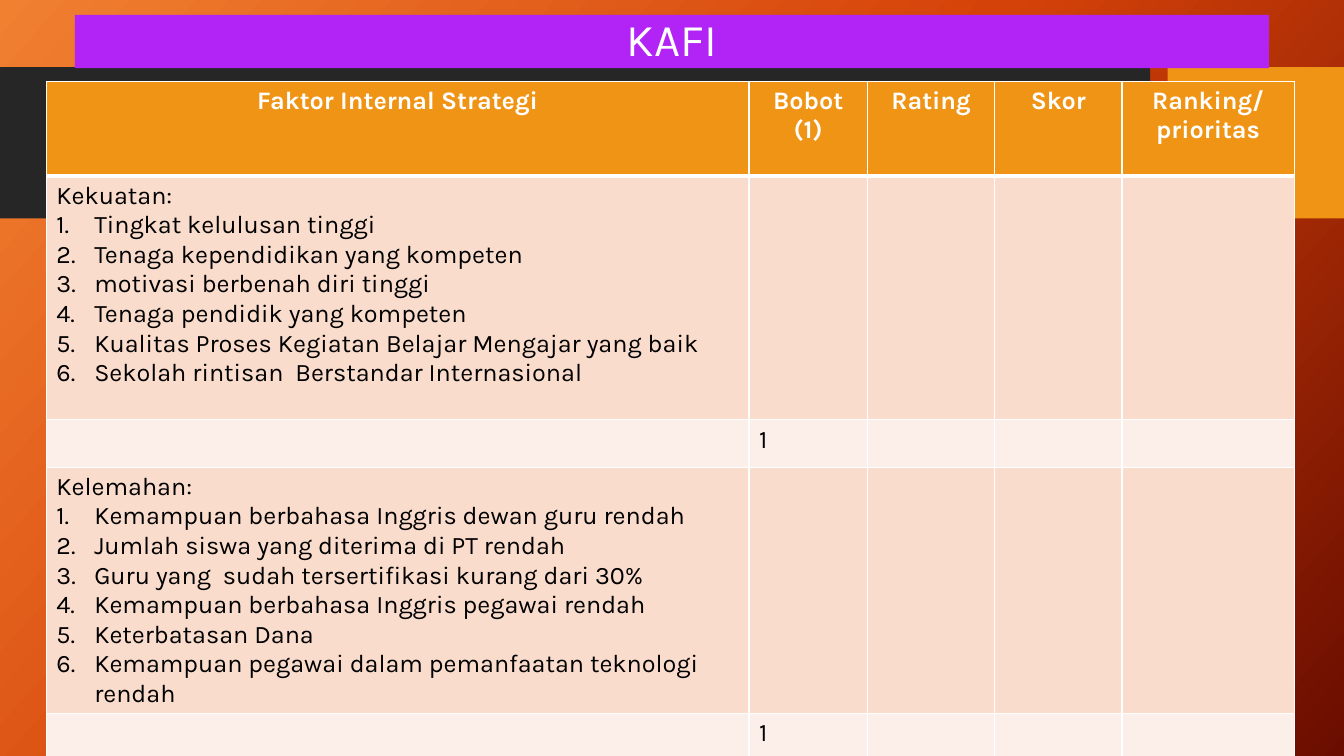
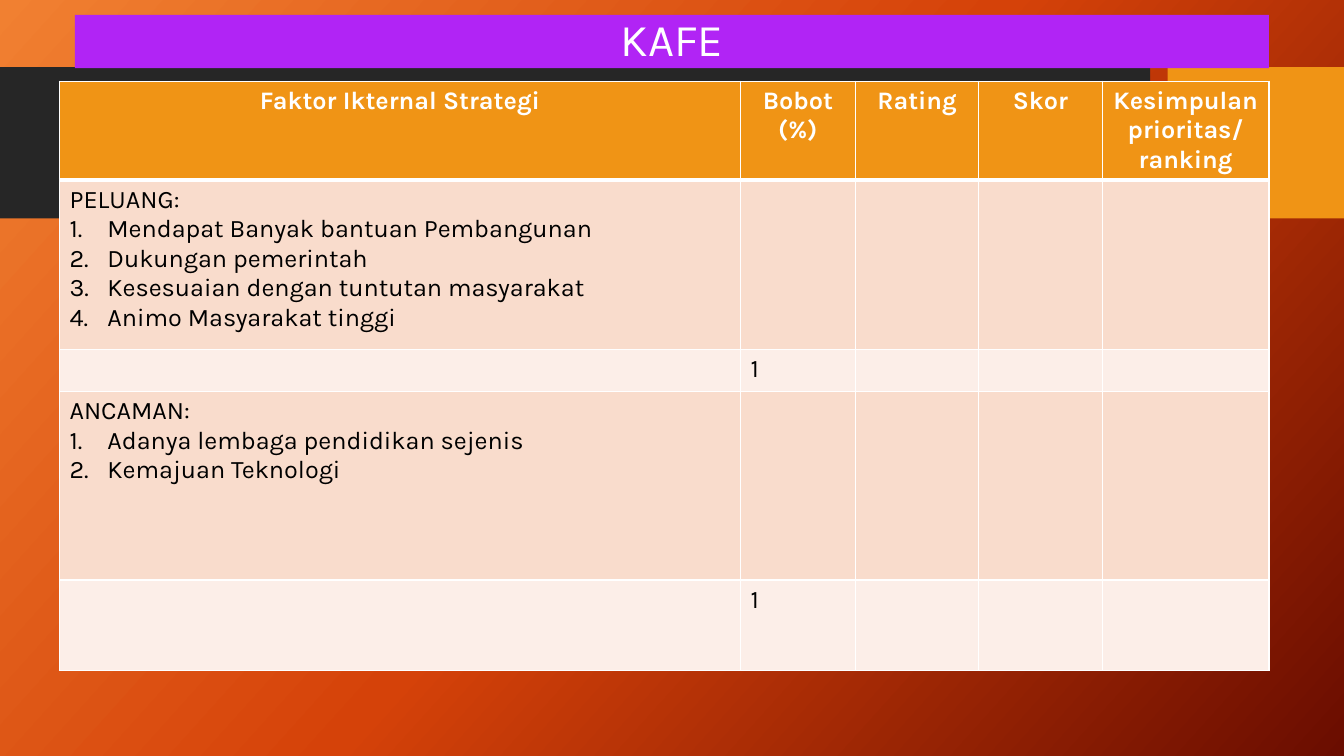
from copy import deepcopy
from dataclasses import dataclass

from lxml import etree
from pptx import Presentation
from pptx.dml.color import RGBColor
from pptx.enum import shapes, text
from pptx.oxml import ns
from pptx.util import Pt


@dataclass(frozen=True)
class Theme:
    font: str = "Karla"
    title_size: float = 32.4
    body_size: float = 18
    white: str = "FFFFFF"
    black: str = "000000"
    dark: str = "262626"
    orange: str = "F09415"
    purple: str = "B124F5"
    entry: str = "F9DCCC"
    total: str = "FCEEE8"
    gradient: tuple = ((0, "F18031"), (0.5, "D54209"), (1, "6A0D00"))
    gradient_angle: float = 318
    thin: float = 1
    thick: float = 3
    list_indent: float = 27


THEME = Theme()
SLIDE_SIZE = (960, 540)
BAND_TOP, BAND_HEIGHT = 48, 108
TITLE_BOX = (53.5, 10.7, 853, 38)
COLUMN_SHARES = (0.563, 0.095, 0.102, 0.102, 0.138)

FACTOR_SLIDES = [
    {
        "title": "KAFI",
        "box": (33.1, 58, 891.4),
        "heights": (67.7, 174.2, 33.8, 168.5, 43.2),
        "header": ["Faktor Internal Strategi", "Bobot (1)", "Rating", "Skor", "Ranking/\nprioritas"],
        "groups": [
            ("Kekuatan:", [
                "Tingkat kelulusan tinggi",
                "Tenaga kependidikan yang kompeten",
                "motivasi berbenah diri tinggi",
                "Tenaga pendidik yang kompeten",
                "Kualitas Proses Kegiatan Belajar Mengajar yang baik",
                "Sekolah rintisan  Berstandar Internasional",
            ]),
            ("Kelemahan:", [
                "Kemampuan berbahasa Inggris dewan guru rendah",
                "Jumlah siswa yang diterima di PT rendah",
                "Guru yang  sudah tersertifikasi kurang dari 30%",
                "Kemampuan berbahasa Inggris pegawai rendah",
                "Keterbatasan Dana",
                "Kemampuan pegawai dalam pemanfaatan teknologi rendah",
            ]),
        ],
    },
    {
        "title": "KAFE",
        "box": (42.5, 58, 864),
        "heights": (68.4, 121, 30.2, 134.6, 64.8),
        "header": ["Faktor Ikternal Strategi", "Bobot (%)", "Rating", "Skor",
                   "Kesimpulan prioritas/\nranking"],
        "groups": [
            ("PELUANG:", [
                "Mendapat Banyak bantuan Pembangunan",
                "Dukungan pemerintah",
                "Kesesuaian dengan tuntutan masyarakat",
                "Animo Masyarakat tinggi",
            ]),
            ("ANCAMAN:", [
                "Adanya lembaga pendidikan sejenis",
                "Kemajuan Teknologi",
            ]),
        ],
    },
]


def paint(fill, color):
    fill.solid()
    fill.fore_color.rgb = RGBColor.from_string(color)


def add_run(paragraph, words, size, color, bold=False):
    run = paragraph.add_run()
    run.text = words
    run.font.name = THEME.font
    run.font.size = Pt(size)
    run.font.bold = bold
    run.font.color.rgb = RGBColor.from_string(color)


def add_band(slide, box, color):
    band = slide.shapes.add_shape(shapes.MSO_SHAPE.RECTANGLE, *map(Pt, box))
    band.shadow.inherit = False
    paint(band.fill, color)
    band.line.fill.background()
    return band


def add_backdrop(slide):
    fill = slide.background.fill
    fill.gradient()
    fill.gradient_angle = THEME.gradient_angle
    stop_list = next(slide.element.iter(ns.qn("a:gsLst")))
    stop_list.append(deepcopy(stop_list[0]))
    for stop, (position, color) in zip(fill.gradient_stops, THEME.gradient):
        stop.position = position
        stop.color.rgb = RGBColor.from_string(color)
    add_band(slide, (0, BAND_TOP, 821.5, BAND_HEIGHT), THEME.dark)
    add_band(slide, (834, BAND_TOP, 126, BAND_HEIGHT), THEME.orange)


def add_title(slide, box, words):
    frame = add_band(slide, box, THEME.purple).text_frame
    frame.word_wrap = True
    frame.margin_top = frame.margin_bottom = 0
    frame.vertical_anchor = text.MSO_ANCHOR.MIDDLE
    heading = frame.paragraphs[0]
    heading.alignment = text.PP_ALIGN.CENTER
    heading.line_spacing = 0.9
    add_run(heading, words, THEME.title_size, THEME.white)


def set_borders(cell, top, bottom):
    properties = cell._tc.get_or_add_tcPr()
    sides = {"L": THEME.thin, "R": THEME.thin, "T": top, "B": bottom}
    for index, (side, width) in enumerate(sides.items()):
        border = etree.Element(ns.qn("a:ln" + side), w=str(Pt(width)))
        solid = etree.SubElement(border, ns.qn("a:solidFill"))
        etree.SubElement(solid, ns.qn("a:srgbClr"), val=THEME.white)
        properties.insert(index, border)


def number_paragraph(paragraph):
    properties = paragraph._p.get_or_add_pPr()
    properties.set("marL", str(Pt(THEME.list_indent)))
    properties.set("indent", str(-Pt(THEME.list_indent)))
    etree.SubElement(properties, ns.qn("a:buAutoNum"), type="arabicPeriod")


def write_header(cell, label):
    for index, line in enumerate(label.split("\n")):
        frame = cell.text_frame
        paragraph = frame.add_paragraph() if index else frame.paragraphs[0]
        paragraph.alignment = text.PP_ALIGN.CENTER
        add_run(paragraph, line, THEME.body_size, THEME.white, bold=True)


def write_group(cell, heading, factors):
    frame = cell.text_frame
    add_run(frame.paragraphs[0], heading, THEME.body_size, THEME.black)
    for factor in factors:
        paragraph = frame.add_paragraph()
        number_paragraph(paragraph)
        add_run(paragraph, factor, THEME.body_size, THEME.black)


def add_factor_table(slide, box, heights, header, groups):
    left, top, width = box
    table = slide.shapes.add_table(
        len(heights), len(header), Pt(left), Pt(top), Pt(width), Pt(sum(heights))
    ).table
    table.horz_banding = False
    for column, share in zip(table.columns, COLUMN_SHARES):
        column.width = Pt(round(width * share, 2))
    row_fills = [THEME.orange] + [THEME.entry, THEME.total] * len(groups)
    for index, (row, height, color) in enumerate(zip(table.rows, heights, row_fills)):
        row.height = Pt(height)
        for cell in row.cells:
            paint(cell.fill, color)
            set_borders(cell, THEME.thick if index == 1 else THEME.thin,
                        THEME.thick if index == 0 else THEME.thin)
    for column, label in enumerate(header):
        write_header(table.cell(0, column), label)
    for index, (heading, factors) in enumerate(groups):
        entry_row = 1 + 2 * index
        write_group(table.cell(entry_row, 0), heading, factors)
        total = table.cell(entry_row + 1, 1).text_frame.paragraphs[0]
        add_run(total, "1", THEME.body_size, THEME.black)


def add_factor_slide(deck, content):
    slide = deck.slides.add_slide(deck.slide_layouts[6])
    add_backdrop(slide)
    add_title(slide, TITLE_BOX, content["title"])
    add_factor_table(slide, content["box"], content["heights"],
                     content["header"], content["groups"])


def main():
    deck = Presentation()
    deck.slide_width, deck.slide_height = map(Pt, SLIDE_SIZE)
    for content in FACTOR_SLIDES:
        add_factor_slide(deck, content)
    deck.save("out.pptx")


if __name__ == "__main__":
    main()
